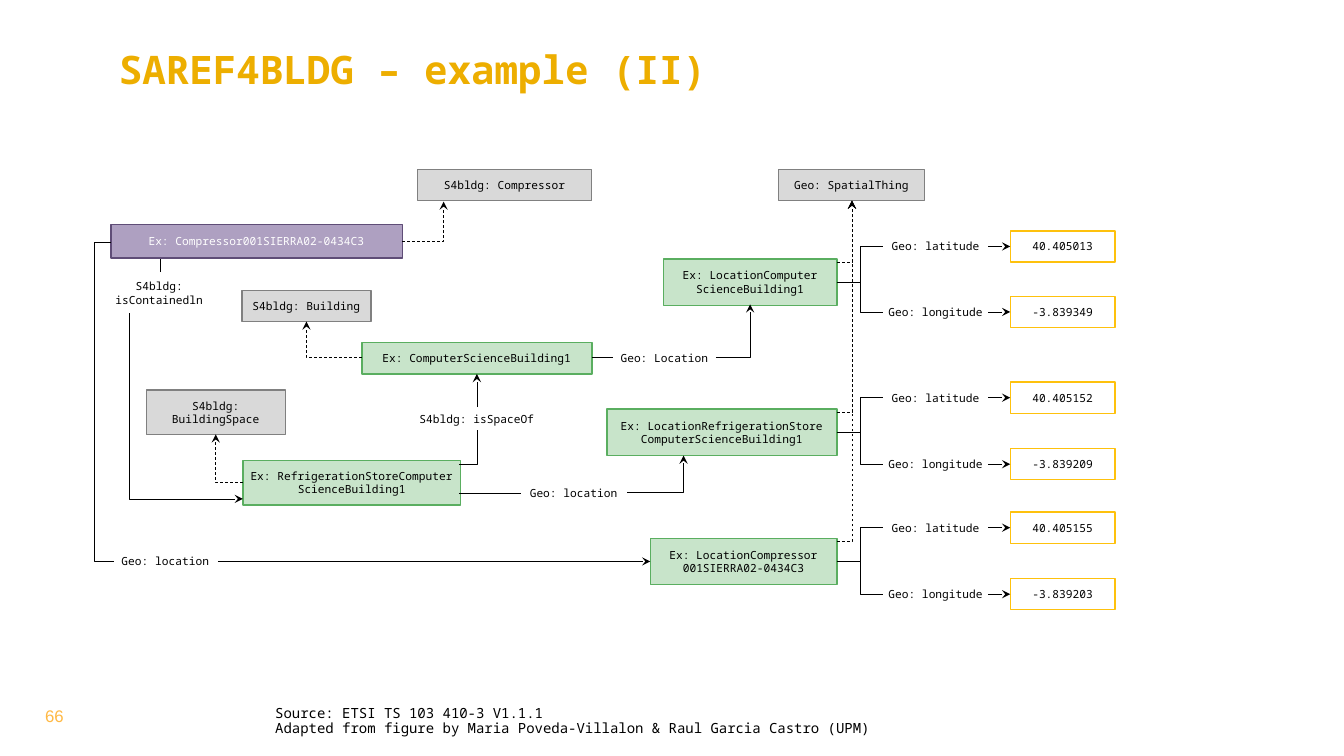
from copy import deepcopy
from dataclasses import dataclass

from lxml import etree
from pptx import Presentation
from pptx import util as u
from pptx.dml import color
from pptx.enum import dml, shapes, text
from pptx.oxml import ns


@dataclass(frozen=True)
class Theme:
    mono: str = "Noto Sans Mono"
    sans: str = "Arial"
    title: str = "EDAE00"
    number: str = "FFB944"
    ink: str = "000000"
    light: str = "FFFFFF"
    title_size: int = 28
    number_size: int = 12
    source_size: int = 10
    label_size: int = 8
    box_line: float = 1
    link_line: float = 0.5


THEME = Theme()
# Box kind: fill, outline, text colour
KINDS = {
    "class": ("D9D9D9", "808080", THEME.ink),
    "place": ("C8E4CA", "5AAE60", THEME.ink),
    "device": ("AEA0C1", "5F4D77", THEME.light),
    "value": (None, "FEC10D", THEME.ink),
}

# Content: lengths in px, 100 px to the inch
TITLE = "SAREF4BLDG – example (II)"
NUMBER = "66"
SOURCE = ["Source: ETSI TS 103 410-3 V1.1.1",
          "Adapted from figure by Maria Poveda-Villalon & Raul Garcia Castro (UPM)"]
BOXES = [  # kind, text, (left, top, width, height)
    ("class", "Geo: SpatialThing", (772, 168, 145, 31)),
    ("class", "S4bldg: Compressor", (414, 168, 173, 31)),
    ("class", "S4bldg: Building", (240, 288, 128, 31)),
    ("class", "S4bldg: BuildingSpace", (145, 387, 138, 44)),
    ("device", "Ex: Compressor001SIERRA02-0434C3", (110, 223, 289, 33)),
    ("place", "Ex: ComputerScienceBuilding1", (359, 340, 228, 31)),
    ("place", "Ex: RefrigerationStoreComputer\vScienceBuilding1", (241, 457, 216, 44)),
]
LABELS = [
    ("Geo: location", (517, 478, 104, 23)),
    ("S4bldg: isSpaceOf", (399, 404, 148, 23)),
    ("Geo: Location", (608, 340, 102, 31)),
    ("Geo: location", (113, 545, 102, 23)),
    ("S4bldg: isContainedln", (108, 270, 100, 41)),
]
LOCATIONS = [  # text, left, top, ((row top, property, value), ...)
    ("Ex: LocationComputer\vScienceBuilding1", 658, 257,
     ((229, "Geo: latitude", "40.405013"), (294, "Geo: longitude", "-3.839349"))),
    ("Ex: LocationRefrigerationStore\vComputerScienceBuilding1", 602, 406,
     ((379, "Geo: latitude", "40.405152"), (445, "Geo: longitude", "-3.839209"))),
    ("Ex: LocationCompressor\v001SIERRA02-0434C3", 645, 534,
     ((508, "Geo: latitude", "40.405155"), (574, "Geo: longitude", "-3.839203"))),
]
LINKS = [  # from, to, format
    ((399, 240), (440, 200), dict(bend="corner", dashed=True, arrow="tailEnd")),
    ((359, 355), (304, 319), dict(bend="corner", dashed=True, arrow="tailEnd")),
    ((241, 479), (214, 431), dict(bend="corner", dashed=True, arrow="tailEnd")),
    ((241, 495), (128, 311), dict(bend="corner", arrow="headEnd")),
    ((622, 489), (678, 452), dict(bend="corner", arrow="tailEnd")),
    ((710, 355), (744, 302), dict(bend="corner", arrow="tailEnd")),
    ((455, 461), (473, 427), dict(bend="corner")),
    ((473, 404), (473, 371), dict(arrow="tailEnd")),
    ((159, 270), (159, 257), {}),
    ((455, 489), (517, 489), {}),
    ((587, 355), (608, 355), {}),
    ((216, 557), (645, 557), dict(arrow="tailEnd")),
    ((110, 240), (113, 557), dict(bend="step", via=94)),
]
LOCATION_RIGHT, LOCATION_HEIGHT = 830, 46
ROW_HEIGHT, ROW_WIDTH, LABEL_LEFT, VALUE_LEFT = 31, 104, 876, 1002
SPATIAL_THING = (845, 199)


def px(length):
    return round(length * u.Inches(1) / 100)


def rgb(value):
    return color.RGBColor.from_string(value)


def write(shape, lines, size=THEME.label_size, font=THEME.mono, ink=THEME.ink, bold=False,
          align=text.PP_ALIGN.CENTER, anchor=text.MSO_ANCHOR.MIDDLE, inset=0, spacing=None):
    frame = shape.text_frame
    frame.word_wrap = True
    frame.auto_size = text.MSO_AUTO_SIZE.NONE
    frame.vertical_anchor = anchor
    frame.margin_left = frame.margin_right = px(inset)
    frame.margin_top = frame.margin_bottom = px(inset / 2)
    for index, line in enumerate(lines):
        paragraph = frame.add_paragraph() if index else frame.paragraphs[0]
        paragraph.text = line
        paragraph.alignment = align
        if spacing:
            paragraph.line_spacing = spacing
        for run in paragraph.runs:
            run.font.size, run.font.name, run.font.bold = u.Pt(size), font, bold
            run.font.color.rgb = rgb(ink)
        # Line breaks take the format of the text around them
        for line_break in paragraph._p.findall(ns.qn("a:br")):
            line_break.append(deepcopy(paragraph.runs[0]._r.rPr))


def add_label(slide, lines, place, **style):
    write(slide.shapes.add_textbox(*map(px, place)), lines, **style)


def add_box(slide, kind, caption, place):
    fill, outline, ink = KINDS[kind]
    shape = slide.shapes.add_shape(shapes.MSO_SHAPE.RECTANGLE, *map(px, place))
    shape.shadow.inherit = False
    if fill:
        shape.fill.solid()
        shape.fill.fore_color.rgb = rgb(fill)
    else:
        shape.fill.background()
    shape.line.color.rgb = rgb(outline)
    shape.line.width = u.Pt(THEME.box_line)
    write(shape, [caption], ink=ink)


def add_link(slide, start, end, bend=None, via=None, dashed=False, arrow=None):
    kind = shapes.MSO_CONNECTOR.ELBOW if bend else shapes.MSO_CONNECTOR.STRAIGHT
    link = slide.shapes.add_connector(kind, *map(px, (*start, *end)))
    link.line.color.rgb = rgb(THEME.ink)
    link.line.width = u.Pt(THEME.link_line)
    if dashed:
        link.line.dash_style = dml.MSO_LINE.DASH
    properties = link._element.spPr
    geometry = properties.find(ns.qn("a:prstGeom"))
    if bend == "corner":
        geometry.set("prst", "bentConnector2")
    if via is not None:
        share = round((via - start[0]) / (end[0] - start[0]) * 100000)
        guides = geometry.find(ns.qn("a:avLst"))
        etree.SubElement(guides, ns.qn("a:gd"), name="adj1", fmla=f"val {share}")
    if arrow:
        etree.SubElement(properties.find(ns.qn("a:ln")), ns.qn(f"a:{arrow}"), type="stealth")
    etree.SubElement(properties, ns.qn("a:effectLst"))


def add_location(slide, caption, left, top, rows):
    middle = top + LOCATION_HEIGHT / 2
    add_box(slide, "place", caption, (left, top, LOCATION_RIGHT - left, LOCATION_HEIGHT))
    add_link(slide, (LOCATION_RIGHT, top + 3), SPATIAL_THING,
             bend="corner", dashed=True, arrow="tailEnd")
    for row_top, name, value in rows:
        row_middle = row_top + ROW_HEIGHT / 2
        add_label(slide, [name], (LABEL_LEFT, row_top, ROW_WIDTH, ROW_HEIGHT))
        add_box(slide, "value", value, (VALUE_LEFT, row_top, ROW_WIDTH, ROW_HEIGHT))
        add_link(slide, (LOCATION_RIGHT, middle), (LABEL_LEFT, row_middle), bend="step")
        add_link(slide, (LABEL_LEFT + ROW_WIDTH, row_middle), (VALUE_LEFT, row_middle),
                 arrow="tailEnd")


def main():
    presentation = Presentation()
    presentation.slide_width, presentation.slide_height = px(1333), px(750)
    slide = presentation.slides.add_slide(presentation.slide_layouts[5])

    # Title, slide number and source
    title = slide.shapes.title
    title.left, title.top, title.width, title.height = map(px, (108, 40, 998, 90))
    write(title, [TITLE], size=THEME.title_size, ink=THEME.title, bold=True, inset=10,
          align=text.PP_ALIGN.LEFT, anchor=text.MSO_ANCHOR.TOP)
    add_label(slide, [NUMBER], (0, 671, 108, 79), size=THEME.number_size,
              font=THEME.sans, ink=THEME.number)
    add_label(slide, SOURCE, (273, 701, 836, 30), size=THEME.source_size, spacing=0.9,
              align=text.PP_ALIGN.LEFT, anchor=text.MSO_ANCHOR.BOTTOM)

    # Diagram
    for box in BOXES:
        add_box(slide, *box)
    for caption, place in LABELS:
        add_label(slide, [caption], place)
    for location in LOCATIONS:
        add_location(slide, *location)
    for start, end, style in LINKS:
        add_link(slide, start, end, **style)

    presentation.save("out.pptx")


if __name__ == "__main__":
    main()
